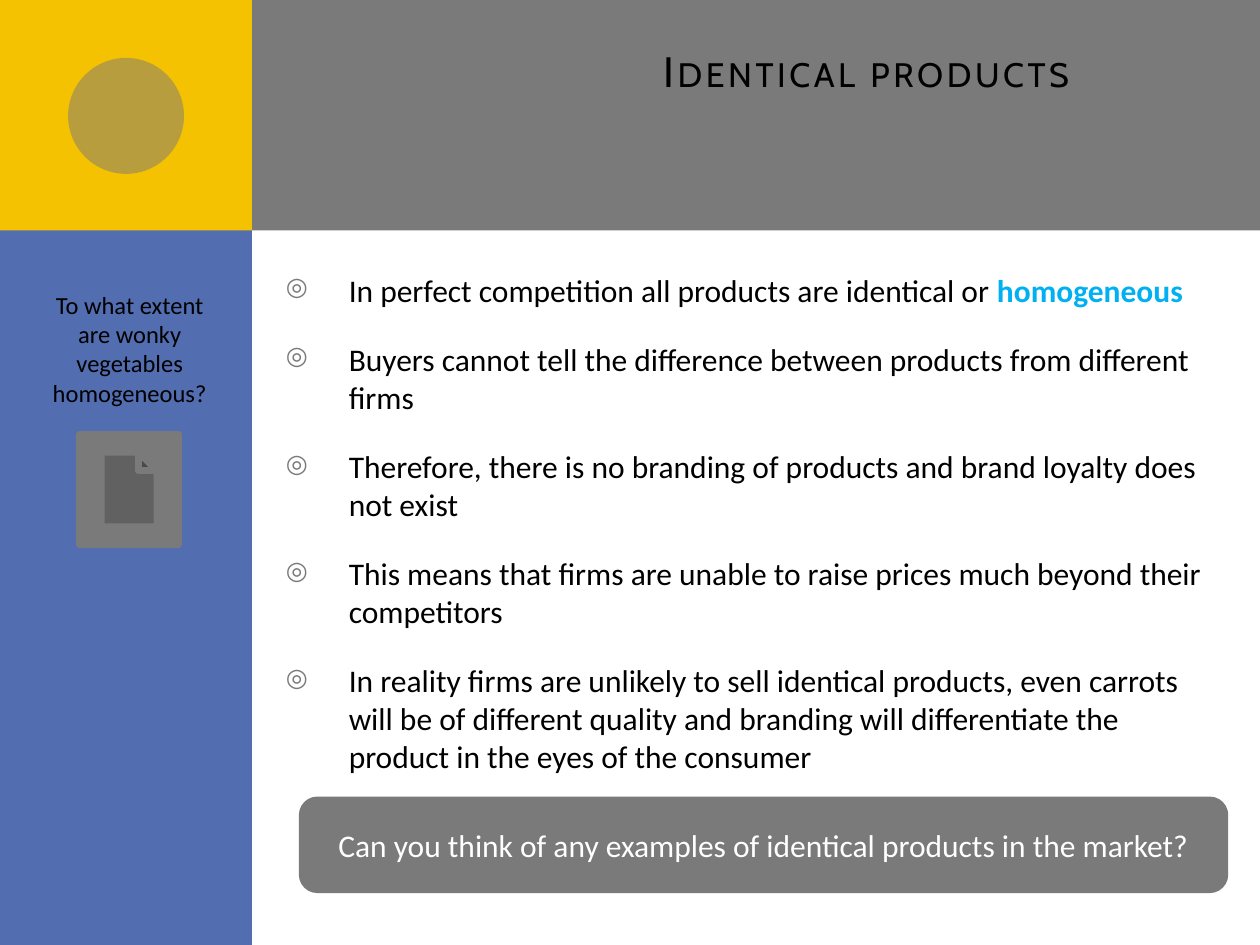
from dataclasses import dataclass

from lxml import etree
from pptx import Presentation
from pptx.dml.color import RGBColor
from pptx.enum.shapes import MSO_SHAPE
from pptx.enum.text import MSO_ANCHOR, PP_ALIGN
from pptx.oxml.ns import qn
from pptx.util import Inches, Pt

RECTANGLE = MSO_SHAPE.RECTANGLE
OVAL = MSO_SHAPE.OVAL
ROUNDED = MSO_SHAPE.ROUNDED_RECTANGLE
DOCUMENT_BUTTON = MSO_SHAPE.ACTION_BUTTON_DOCUMENT
CENTER, RIGHT, LEFT = PP_ALIGN.CENTER, PP_ALIGN.RIGHT, PP_ALIGN.LEFT
TOP, MIDDLE = MSO_ANCHOR.TOP, MSO_ANCHOR.MIDDLE

COLORS = {
    "gray": "7A7A7A",
    "blue": "526DB0",
    "yellow": "F5C201",
    "highlight": "00B0F0",
    "black": "000000",
    "white": "FFFFFF",
}
SIDEBAR_WIDTH = 2
BANNER_HEIGHT = 1.83


@dataclass(frozen=True)
class Box:
    left: float
    top: float
    width: float
    height: float

    def lengths(self) -> tuple:
        return tuple(map(Inches, (self.left, self.top, self.width, self.height)))


@dataclass(frozen=True)
class Panel:
    kind: int
    box: Box
    color: str
    opacity: int = 100
    border: float = 0


@dataclass(frozen=True)
class Words:
    text: str
    color: str = "black"
    size: float = 18
    font: str = "Calibri"
    bold: bool = False


PANELS = [
    Panel(RECTANGLE, Box(SIDEBAR_WIDTH, 0, 10 - SIDEBAR_WIDTH, BANNER_HEIGHT), "gray"),
    Panel(RECTANGLE, Box(0, 0, SIDEBAR_WIDTH, 7.5), "blue"),
    Panel(RECTANGLE, Box(0, 0, SIDEBAR_WIDTH, BANNER_HEIGHT), "yellow"),
    Panel(OVAL, Box(0.54, 0.46, 0.92, 0.92), "gray", opacity=50),
    Panel(DOCUMENT_BUTTON, Box(0.63, 3.45, 0.79, 0.87), "gray", border=4),
]
QUESTION_PANEL = Panel(ROUNDED, Box(2.4, 6.35, 7.32, 0.71), "gray", border=4)

BULLETS = [
    [
        Words("In perfect competition all products are identical or "),
        Words("homogeneous", color="highlight", bold=True),
    ],
    [Words("Buyers cannot tell the difference between products from different firms")],
    [Words("Therefore, there is no branding of products and brand loyalty does not exist")],
    [Words("This means that firms are unable to raise prices much beyond their competitors")],
    [Words("In reality firms are unlikely to sell identical products, even carrots will be "
           "of different quality and branding will differentiate the product in the eyes "
           "of the consumer")],
]


def rgb(name: str) -> RGBColor:
    return RGBColor.from_string(COLORS[name])


def set_attributes(target, values: dict) -> None:
    for name, value in values.items():
        setattr(target, name, value)


def add_panel(slide, panel: Panel):
    shape = slide.shapes.add_shape(panel.kind, *panel.box.lengths())
    shape.shadow.inherit = False
    shape.fill.solid()
    shape.fill.fore_color.rgb = rgb(panel.color)
    if panel.opacity < 100:
        color = shape.fill._xPr.find(".//" + qn("a:srgbClr"))
        etree.SubElement(color, qn("a:alpha"), val=str(panel.opacity * 1000))
    if panel.border:
        shape.line.color.rgb = rgb(panel.color)
        shape.line.width = Pt(panel.border)
    else:
        shape.line.fill.background()
    return shape


def write_paragraph(paragraph, words: list[Words], alignment) -> None:
    paragraph.alignment = alignment
    for part in words:
        run = paragraph.add_run()
        run.text = part.text
        set_attributes(run.font, {"name": part.font, "size": Pt(part.size), "bold": part.bold})
        run.font.color.rgb = rgb(part.color)


def add_text_box(slide, box: Box, paragraphs: list[list[Words]], alignment, **frame_format):
    frame = slide.shapes.add_textbox(*box.lengths()).text_frame
    set_attributes(frame, {"word_wrap": True, "vertical_anchor": TOP, **frame_format})
    for index, words in enumerate(paragraphs):
        paragraph = frame.add_paragraph() if index else frame.paragraphs[0]
        write_paragraph(paragraph, words, alignment)
    return frame


def add_bullet(paragraph) -> None:
    """Give the paragraph a hanging gray ring and space above."""
    paragraph.space_before = Pt(18)
    properties = paragraph._p.get_or_add_pPr()
    properties.set("marL", str(Inches(0.5)))
    properties.set("indent", str(-Inches(0.5)))
    bullet_color = etree.SubElement(properties, qn("a:buClr"))
    etree.SubElement(bullet_color, qn("a:srgbClr"), val=COLORS["gray"])
    etree.SubElement(properties, qn("a:buSzPct"), val="80000")
    etree.SubElement(properties, qn("a:buChar"), char="◎")


def add_title(slide) -> None:
    title = Words("Identical products", size=24.3, font="Cabin")
    frame = add_text_box(slide, Box(2.4, 0.36, 7.19, 1.18), [[title]], RIGHT,
                         margin_top=0, margin_right=Inches(0.6))
    properties = frame.paragraphs[0].runs[0].font._element
    properties.set("cap", "small")
    properties.set("spc", "200")


def main() -> None:
    presentation = Presentation()
    presentation.slide_width, presentation.slide_height = Inches(10), Inches(7.5)
    slide = presentation.slides.add_slide(presentation.slide_layouts[6])

    for panel in PANELS:
        add_panel(slide, panel)
    add_title(slide)

    body = add_text_box(slide, Box(2.17, 2.1, 7.56, 4.13), BULLETS, LEFT)
    for paragraph in body.paragraphs:
        add_bullet(paragraph)

    question = add_panel(slide, QUESTION_PANEL).text_frame
    set_attributes(question, {"word_wrap": True, "vertical_anchor": MIDDLE})
    question_words = Words("Can you think of any examples of identical products in the market?",
                           color="white")
    write_paragraph(question.paragraphs[0], [question_words], CENTER)

    side_words = Words("To what extent are wonky vegetables homogeneous?", size=14)
    add_text_box(slide, Box(0.28, 2.25, 1.5, 1.04), [[side_words]], CENTER)

    presentation.save("out.pptx")


if __name__ == "__main__":
    main()
